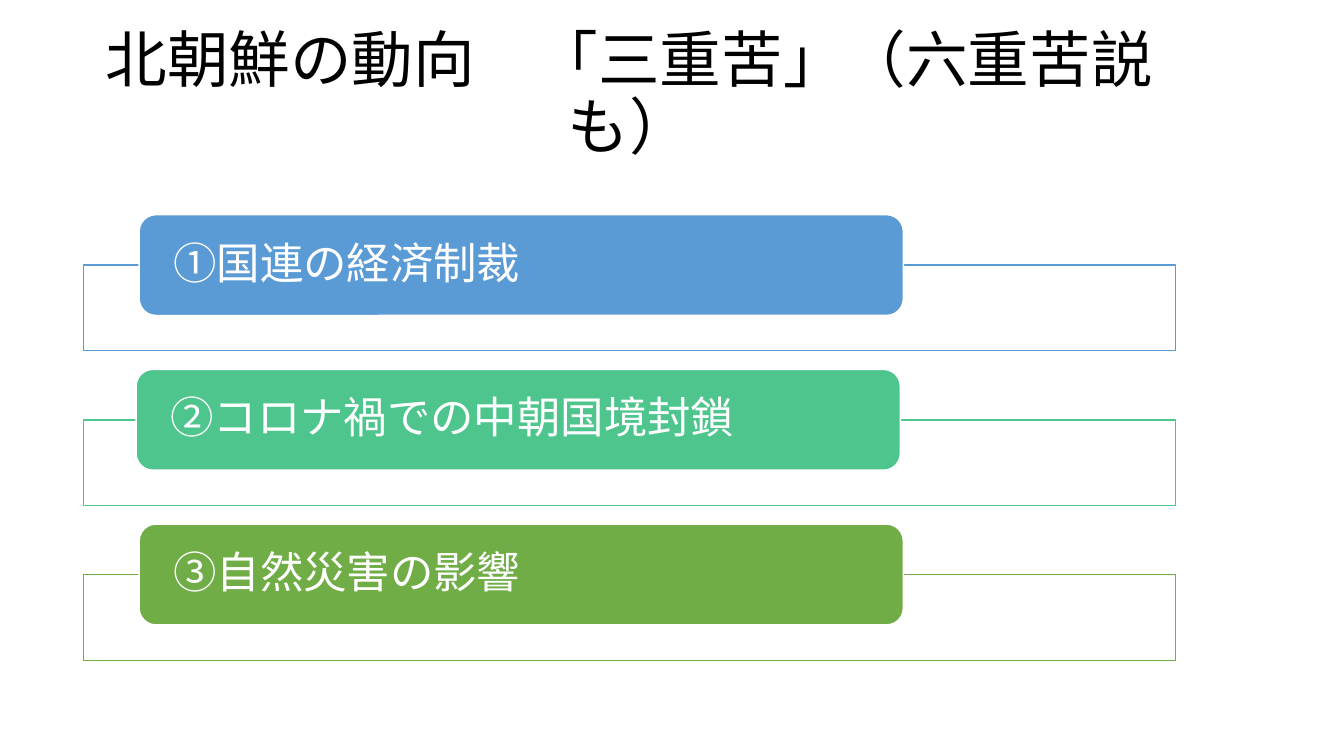
from lxml import etree
from pptx import Presentation
from pptx.dml.color import RGBColor
from pptx.enum import shapes, text
from pptx.oxml import ns
from pptx.util import Inches, Pt

FONT = "Noto Sans CJK JP"
BLACK = RGBColor(0x00, 0x00, 0x00)
WHITE = RGBColor(0xFF, 0xFF, 0xFF)
BLUE = RGBColor(0x5B, 0x9B, 0xD5)
MINT = RGBColor(0x4D, 0xC5, 0x8D)
GREEN = RGBColor(0x70, 0xAD, 0x47)

# Label, colour and left edge of each hardship
ITEMS = [
    ("①国連の経済制裁", BLUE, 1.38),
    ("②コロナ禍での中朝国境封鎖", MINT, 1.35),
    ("③自然災害の影響", GREEN, 1.38),
]
TOP, STEP = 2.13, 1.535


def write(frame, words, size, color, align):
    frame.word_wrap = True
    frame.auto_size = text.MSO_AUTO_SIZE.NONE
    frame.vertical_anchor = text.MSO_ANCHOR.MIDDLE
    para = frame.paragraphs[0]
    para.alignment = align
    para.line_spacing = 0.9
    run = para.add_run()
    run.text = words
    run.font.size = Pt(size)
    run.font.name = FONT
    run.font.color.rgb = color
    # East Asian typeface
    props = run.font._element
    etree.SubElement(props, ns.qn("a:ea"), typeface=FONT)


def add_box(slide, kind, left, top, width, height, fill, line):
    box = slide.shapes.add_shape(
        kind, Inches(left), Inches(top), Inches(width), Inches(height))
    box.shadow.inherit = False
    box.fill.solid()
    box.fill.fore_color.rgb = fill
    box.line.color.rgb = line
    box.line.width = Pt(1)
    return box


def add_title(slide, words):
    title = slide.shapes.title
    title.left, title.top = Inches(0.83), Inches(0.32)
    title.width, title.height = Inches(10.83), Inches(1.27)
    write(title.text_frame, words, 44, BLACK, text.PP_ALIGN.CENTER)


def add_item(slide, top, label, color, left):
    # Outlined frame behind the label
    frame = add_box(slide, shapes.MSO_SHAPE.RECTANGLE,
                    0.83, top + 0.5, 10.83, 0.85, WHITE, color)
    tint = frame.fill._xPr.find(".//" + ns.qn("a:srgbClr"))
    etree.SubElement(tint, ns.qn("a:alpha"), val="90000")
    # Filled label
    tab = add_box(slide, shapes.MSO_SHAPE.ROUNDED_RECTANGLE,
                  left, top, 7.58, 1, color, WHITE)
    body = tab.text_frame
    body.margin_left = body.margin_right = Inches(0.29)
    body.margin_top = body.margin_bottom = 0
    write(body, label, 31, WHITE, text.PP_ALIGN.LEFT)


def main():
    deck = Presentation()
    deck.slide_width, deck.slide_height = Inches(13.33), Inches(7.5)
    slide = deck.slides.add_slide(deck.slide_layouts[5])
    add_title(slide, "北朝鮮の動向　「三重苦」（六重苦説も）")
    for row, item in enumerate(ITEMS):
        add_item(slide, TOP + row * STEP, *item)
    deck.save("out.pptx")


if __name__ == "__main__":
    main()
